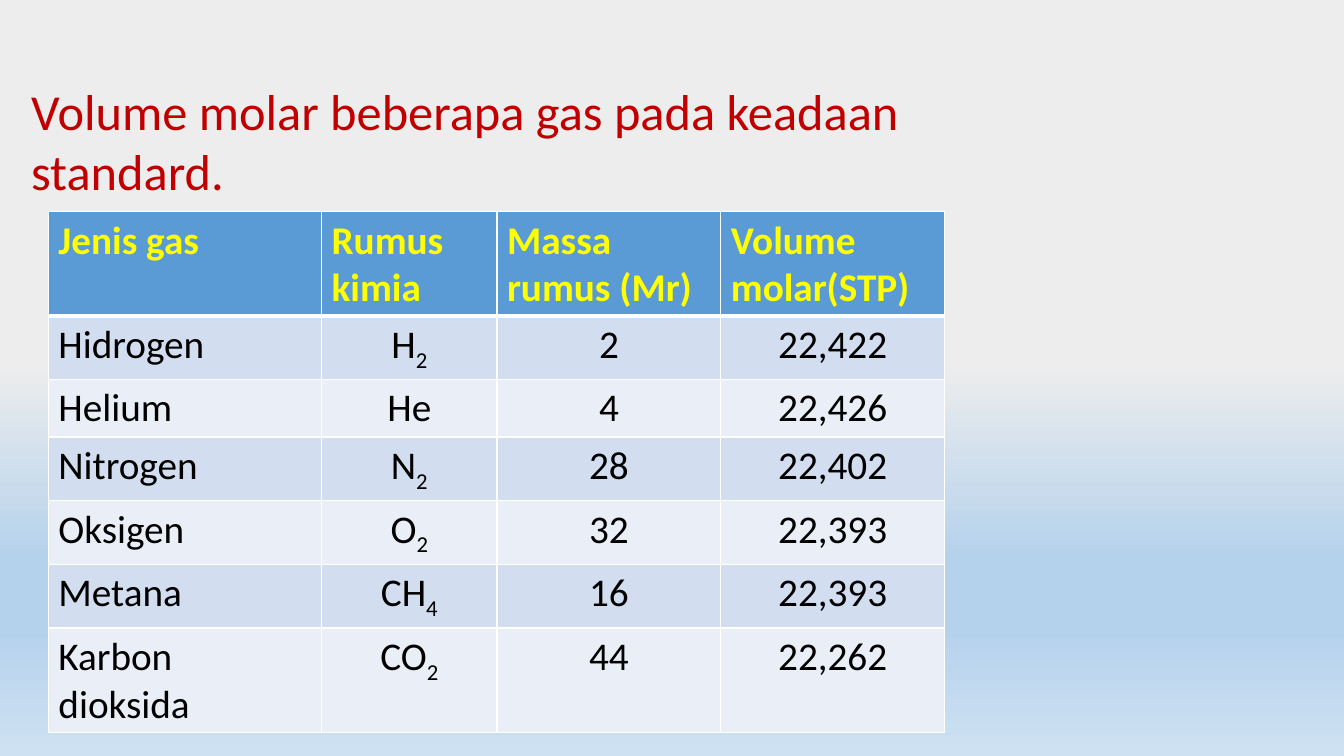
from pptx import Presentation
from pptx.dml.color import RGBColor
from pptx.enum.text import MSO_ANCHOR as Anchor, PP_ALIGN as Align
from pptx.oxml import parse_xml
from pptx.oxml.ns import nsdecls, qn
from pptx.util import Inches, Pt

FONT = "Calibri"
RED = RGBColor(0xC0, 0x00, 0x00)
YELLOW = RGBColor(0xFF, 0xFF, 0x00)
BLACK = RGBColor(0x00, 0x00, 0x00)
WHITE = RGBColor(0xFF, 0xFF, 0xFF)
HEADER_BLUE = RGBColor(0x5B, 0x9B, 0xD5)
BAND_DARK = RGBColor(0xD2, 0xDE, 0xEF)
BAND_LIGHT = RGBColor(0xEA, 0xEF, 0xF7)
SKY_GREY = RGBColor(0xED, 0xED, 0xED)
SKY_BLUE = RGBColor(0xB5, 0xD2, 0xEC)
SKY_PALE = RGBColor(0xCE, 0xE1, 0xF2)

SKY_STOPS = [(48, SKY_GREY), (74, SKY_BLUE), (83, SKY_BLUE), (100, SKY_PALE)]
TITLE_FORMAT = {"size": Pt(36), "name": FONT, "color": RED}
HEADER_FORMAT = {"size": Pt(28), "name": FONT, "color": YELLOW, "bold": True}
BODY_FORMAT = {"size": Pt(28), "name": FONT, "color": BLACK, "bold": False}

COLUMN_WIDTHS = [2.71, 1.74, 2.22, 2.22]
ROW_HEIGHTS = [1.03, 0.63, 0.57, 0.63, 0.63, 0.63, 1.03]
HEADINGS = ["Jenis gas", "Rumus kimia", "Massa rumus (Mr)", "Volume molar(STP)"]
GASES = [
    ("Hidrogen", "H2", "2", "22,422"),
    ("Helium", "He", "4", "22,426"),
    ("Nitrogen", "N2", "28", "22,402"),
    ("Oksigen", "O2", "32", "22,393"),
    ("Metana", "CH4", "16", "22,393"),
    ("Karbon dioksida", "CO2", "44", "22,262"),
]
FORMULA_COLUMN = 1


def paint_background(page):
    fill = page.background.fill
    fill.gradient()
    fill.gradient_angle = 270  # counter-clockwise, so top to bottom
    stop_list = next(page.element.iter(qn("a:gsLst")))
    for stop in list(stop_list):
        stop_list.remove(stop)
    for position, color in SKY_STOPS:
        stop_list.append(parse_xml(
            f'<a:gs {nsdecls("a")} pos="{position * 1000}">'
            f'<a:srgbClr val="{color}"/></a:gs>'))


def add_span(para, text, style, subscript=False):
    span = para.add_run()
    span.text = text
    for name, value in style.items():
        if name == "color":
            span.font.color.rgb = value
        else:
            setattr(span.font, name, value)
    if subscript:
        span.font._element.set("baseline", "-25000")


def add_title(page, text):
    box = page.shapes.add_textbox(
        Inches(0.21), Inches(0.13), Inches(10.08), Inches(2.52))
    frame = box.text_frame
    frame.word_wrap = True
    frame.vertical_anchor = Anchor.MIDDLE
    add_span(frame.paragraphs[0], text, TITLE_FORMAT)


def set_borders(cell, top, bottom):
    properties = cell._tc.get_or_add_tcPr()
    for side, width in (("L", 1), ("R", 1), ("T", top), ("B", bottom)):
        properties.append(parse_xml(
            f'<a:ln{side} {nsdecls("a")} w="{Pt(width)}"><a:solidFill>'
            f'<a:srgbClr val="{WHITE}"/></a:solidFill></a:ln{side}>'))


def fill_cell(cell, row, column, text):
    # Borders come before the fill; a thick line parts header and body
    set_borders(cell, 3 if row == 1 else 1, 3 if row == 0 else 1)
    cell.fill.solid()
    band = BAND_DARK if row % 2 else BAND_LIGHT
    cell.fill.fore_color.rgb = band if row else HEADER_BLUE

    para = cell.text_frame.paragraphs[0]
    if row == 0:
        add_span(para, text, HEADER_FORMAT)
        return
    para.alignment = Align.CENTER if column else Align.LEFT
    if column == FORMULA_COLUMN and text[-1].isdigit():
        add_span(para, text[:-1], BODY_FORMAT)
        add_span(para, text[-1], BODY_FORMAT, subscript=True)
    else:
        add_span(para, text, BODY_FORMAT)


def add_gas_table(page):
    rows = [HEADINGS, *GASES]
    table = page.shapes.add_table(
        len(rows), len(HEADINGS), Inches(0.48), Inches(2.1),
        Inches(sum(COLUMN_WIDTHS)), Inches(sum(ROW_HEIGHTS))).table
    for column, width in zip(table.columns, COLUMN_WIDTHS):
        column.width = Inches(width)
    for row, height in zip(table.rows, ROW_HEIGHTS):
        row.height = Inches(height)
    for row, texts in enumerate(rows):
        for column, text in enumerate(texts):
            fill_cell(table.cell(row, column), row, column, text)


def main():
    deck = Presentation()
    deck.slide_width, deck.slide_height = Inches(13.33), Inches(7.5)
    page = deck.slides.add_slide(deck.slide_layouts[6])
    paint_background(page)
    add_title(page, "Volume molar beberapa gas pada keadaan standard.")
    add_gas_table(page)
    deck.save("out.pptx")


if __name__ == "__main__":
    main()
